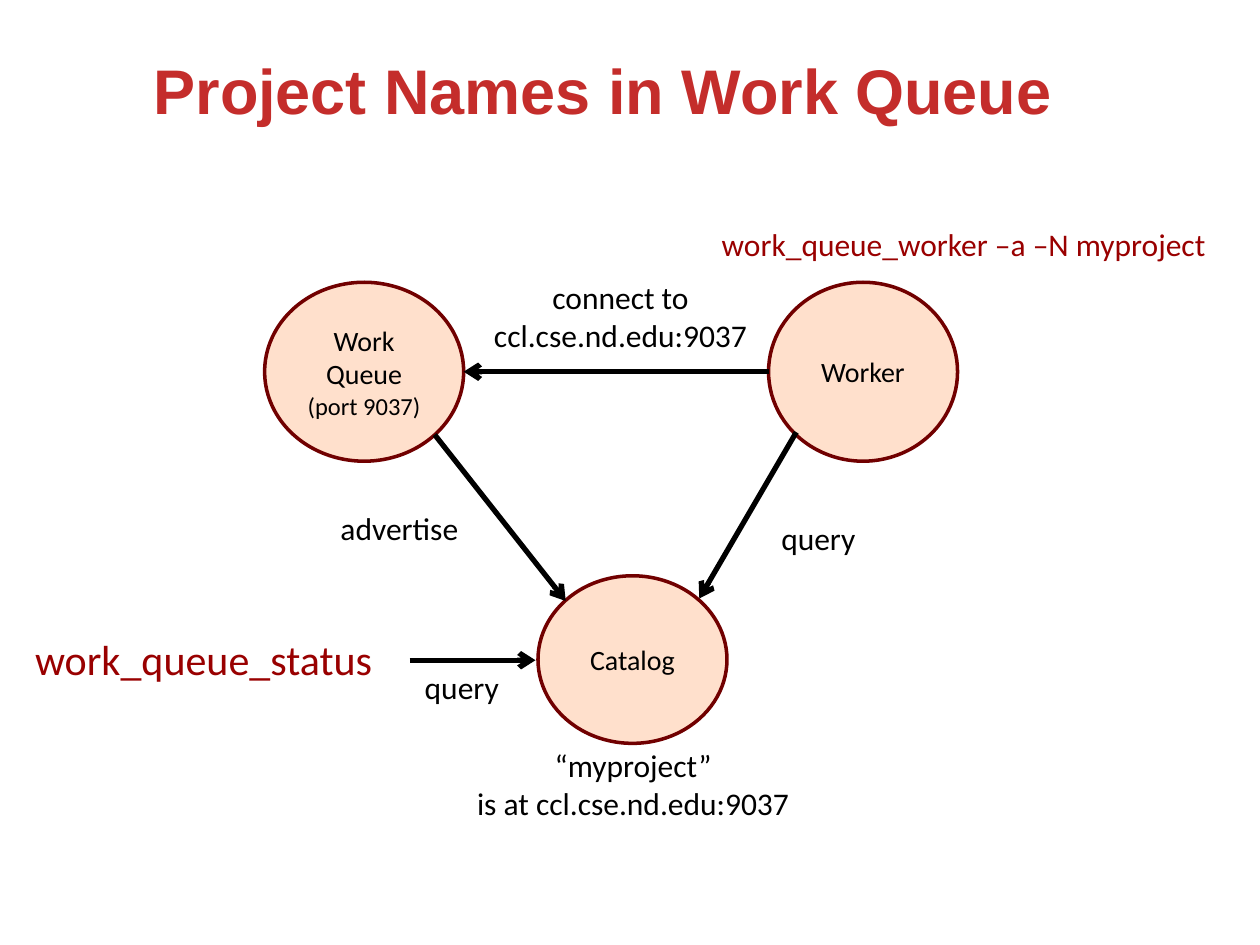
from pptx import Presentation
from pptx.dml.color import RGBColor
from pptx.enum.shapes import MSO_CONNECTOR as Conn, MSO_SHAPE as Geo
from pptx.enum.text import MSO_ANCHOR as Anchor, PP_ALIGN as Align
from pptx.oxml.ns import qn
from pptx.util import Inches, Pt
from lxml.etree import SubElement


def rgb(code):
    return RGBColor.from_string(code)


def write(frame, text, sizes, color, align=Align.CENTER, face="Calibri", bold=False):
    frame.text = text
    for para, size in zip(frame.paragraphs, sizes):
        para.alignment = align
        for run in para.runs:
            font = run.font
            font.name, font.size, font.bold = face, Pt(size), bold
            font.color.rgb = rgb(color)


deck = Presentation()
deck.slide_width, deck.slide_height = Inches(10), Inches(7.5)
slide = deck.slides.add_slide(deck.slide_layouts[5])
shapes = slide.shapes

title = shapes.title
title.left, title.top = Inches(0.41), Inches(0.36)
title.width, title.height = Inches(8.75), Inches(1.49)
title.text_frame.vertical_anchor = Anchor.TOP
write(title.text_frame, "Project Names in Work Queue", [36], "C42D2B",
      face="Arial", bold=True)

nodes = [
    ("Worker", 6.1, 2.24, 1.5, 1.42),
    ("Catalog", 4.27, 4.57, 1.5, 1.33),
    ("Work Queue\n(port 9037)", 2.1, 2.24, 1.58, 1.42),
]
for text, *box in nodes:
    node = shapes.add_shape(Geo.OVAL, *map(Inches, box))
    node.shadow.inherit = False
    node.fill.solid()
    node.fill.fore_color.rgb = rgb("FFE0CC")
    node.line.color.rgb = rgb("710000")
    node.line.width = Pt(2)
    node.text_frame.word_wrap = True
    node.text_frame.vertical_anchor = Anchor.MIDDLE
    write(node.text_frame, text, [16, 14], "000000")

arrows = [
    (6.1, 2.95, 3.68, 2.95),
    (3.45, 3.45, 4.49, 4.77),
    (6.32, 3.43, 5.55, 4.75),
    (3.25, 5.24, 4.25, 5.24),
]
for ends in arrows:
    arrow = shapes.add_connector(Conn.STRAIGHT, *map(Inches, ends))
    arrow.line.color.rgb = rgb("000000")
    arrow.line.width = Pt(3)
    SubElement(arrow.line._get_or_add_ln(), qn("a:tailEnd"), type="arrow")
    SubElement(arrow._element.spPr, qn("a:effectLst"))

black, red = "000000", "990000"
labels = [
    ("connect to\nccl.cse.nd.edu:9037", 3.82, 2.16, 2.21, 0.7, 18, black, Align.CENTER),
    ("advertise", 2.6, 3.99, 1.14, 0.4, 18, black, Align.CENTER),
    ("“myproject”\nis at ccl.cse.nd.edu:9037", 3.68, 5.87, 2.69, 0.7, 18, black, Align.CENTER),
    ("query", 6.1, 4.07, 0.79, 0.4, 18, black, Align.CENTER),
    ("query", 3.27, 5.25, 0.79, 0.4, 18, black, Align.CENTER),
    ("work_queue_status", 0.18, 4.98, 2.89, 0.5, 24, red, Align.LEFT),
    ("work_queue_worker –a –N myproject", 5.63, 1.74, 4.36, 0.4, 18, red, Align.LEFT),
]
for text, left, top, width, height, size, color, align in labels:
    label = shapes.add_textbox(*map(Inches, (left, top, width, height)))
    label.text_frame.word_wrap = False
    write(label.text_frame, text, [size, size], color, align)

deck.save("out.pptx")
